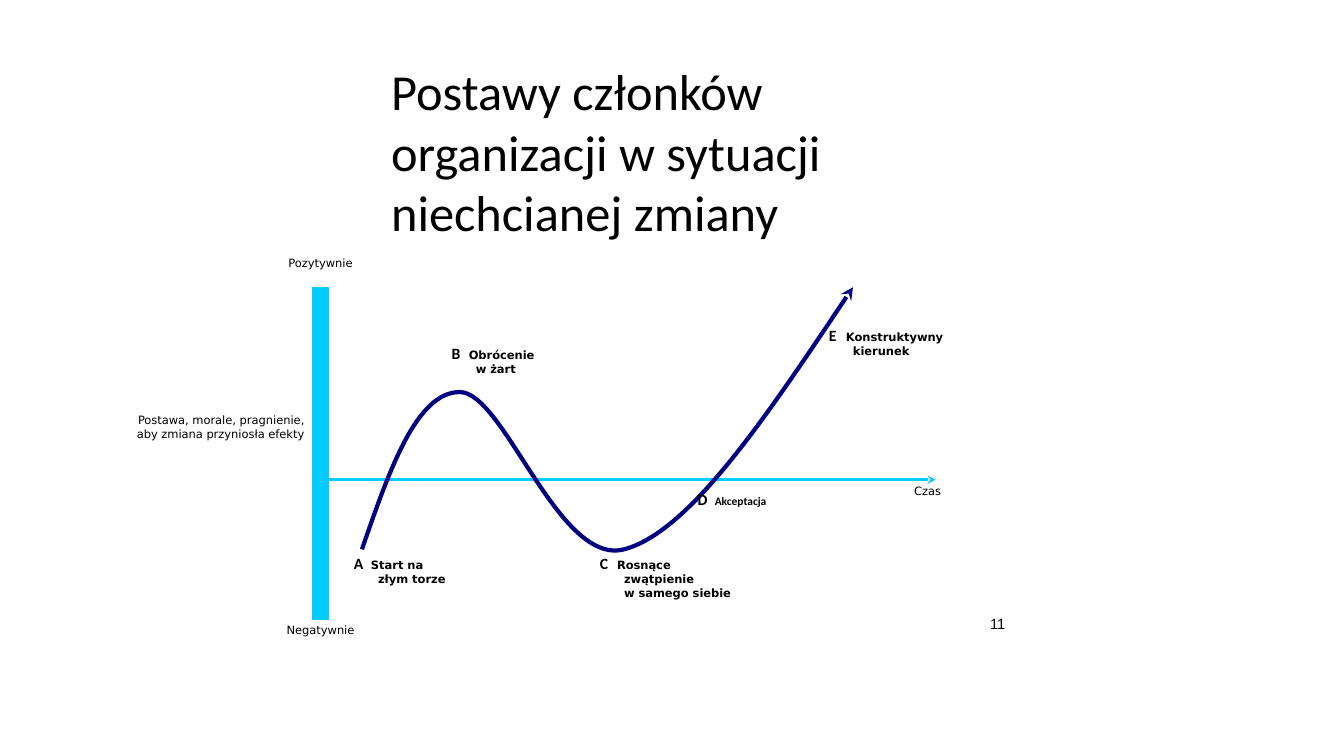
from collections import namedtuple

from lxml.etree import SubElement
from pptx import Presentation
from pptx.dml.color import RGBColor
from pptx.enum.shapes import MSO_CONNECTOR as Connector, MSO_SHAPE as Shape
from pptx.enum.text import MSO_ANCHOR as Anchor, PP_ALIGN as Align
from pptx.oxml.ns import qn
from pptx.util import Inches, Pt

BLACK, CYAN, NAVY = "000000", "00CCFF", "000080"
SANS, LABEL_FONT = "Calibri", "DejaVu Sans"
LABEL_SIZE, LETTER_SIZE = 8.2, 11.2

Box = namedtuple("Box", "left top width height")


def color(hex_string):
    return RGBColor.from_string(hex_string)


def add_run(paragraph, text, size, font, bold=False):
    run = paragraph.add_run()
    run.text = text
    run.font.size = Pt(size)
    run.font.name = font
    run.font.bold = bold
    run.font.color.rgb = color(BLACK)


def add_text_frame(slide, box, side_inset=0.08, anchor=Anchor.TOP):
    frame = slide.shapes.add_textbox(*map(Inches, box)).text_frame
    frame.word_wrap = True
    frame.vertical_anchor = anchor
    frame.margin_left = frame.margin_right = Inches(side_inset)
    frame.margin_top = frame.margin_bottom = Inches(0.04)
    return frame


def style_line(shape, hex_string, width, arrow=False):
    shape.line.color.rgb = color(hex_string)
    shape.line.width = Pt(width)
    if arrow:
        SubElement(shape.line._get_or_add_ln(), qn("a:tailEnd"), type="stealth")


def add_title(slide, box):
    frame = add_text_frame(slide, box, 0.07, Anchor.MIDDLE)
    add_run(frame.paragraphs[0],
            "Postawy członków organizacji w sytuacji niechcianej zmiany", 36, SANS)


def add_page_number(slide, box):
    number = add_text_frame(slide, box, 0.07).paragraphs[0]
    number.alignment = Align.RIGHT
    add_run(number, "11", 10.5, "Arial")


def add_axes(slide, box, axis_y):
    """Draw the attitude bar, the time arrow and the captions around them."""
    bar = slide.shapes.add_shape(Shape.RECTANGLE, Inches(box.left), Inches(box.top),
                                 Inches(0.16), Inches(box.height))
    bar.shadow.inherit = False
    bar.fill.solid()
    bar.fill.fore_color.rgb = color(CYAN)
    style_line(bar, CYAN, 0.75)

    time_y = box.top + axis_y
    time_axis = slide.shapes.add_connector(
        Connector.STRAIGHT, Inches(box.left), Inches(time_y),
        Inches(box.left + box.width), Inches(time_y))
    style_line(time_axis, CYAN, 2, arrow=True)
    SubElement(time_axis._element.spPr, qn("a:effectLst"))

    captions = [
        ("Postawa, morale, pragnienie, aby zmiana przyniosła efekty",
         Align.RIGHT, -1.95, 1.21, 1.95, 1.39),
        ("Pozytywnie", Align.CENTER, -0.65, -0.35, 1.46, 0.52),
        ("Negatywnie", Align.CENTER, -0.65, box.height - 0.01, 1.46, 0.52),
        ("Czas", Align.CENTER, box.width - 0.81, axis_y, 1.46, 0.52),
    ]
    for text, alignment, dx, dy, width, height in captions:
        frame = add_text_frame(slide, Box(box.left + dx, box.top + dy, width, height))
        caption = frame.paragraphs[0]
        caption.alignment = alignment
        add_run(caption, text, LABEL_SIZE, LABEL_FONT)


def add_curve(slide, box):
    """Draw the attitude curve as three Bézier arcs."""
    offsets = [(0.49, 2.6),
               (0.76, 1.82), (1.03, 1.04), (1.46, 1.04),
               (1.9, 1.04), (2.44, 2.77), (3.09, 2.6),
               (3.74, 2.43), (4.55, 1.21), (5.36, 0)]
    points = [(Inches(box.left + dx), Inches(box.top + dy)) for dx, dy in offsets]
    builder = slide.shapes.build_freeform(*points[0])
    builder.add_line_segments(points[1:], close=False)
    curve = builder.convert_to_shape()
    curve.shadow.inherit = False
    curve.fill.background()
    style_line(curve, NAVY, 3, arrow=True)

    outline = curve._element.find(".//" + qn("a:path"))
    segments = outline.findall(qn("a:lnTo"))
    for first in range(0, len(segments), 3):
        arc = SubElement(outline, qn("a:cubicBezTo"))
        for segment in segments[first:first + 3]:
            arc.append(segment[0])
            outline.remove(segment)


def add_stage(slide, box, letter, first_line, more_lines=(), font=LABEL_FONT):
    """Label a stage: letter, tab and name, with further lines indented."""
    frame = add_text_frame(slide, box)
    heading = frame.paragraphs[0]
    tabs = SubElement(heading._p.get_or_add_pPr(), qn("a:tabLst"))
    SubElement(tabs, qn("a:tab"), pos=str(Inches(0.17)), algn="l")
    add_run(heading, letter, LETTER_SIZE, SANS, bold=True)
    add_run(heading, "\t" + first_line, LABEL_SIZE, font, bold=True)
    if more_lines:
        rest = frame.add_paragraph()
        rest._p.get_or_add_pPr().set("marL", str(Inches(0.24)))
        for index, line in enumerate(more_lines):
            if index:
                rest.add_line_break()
            add_run(rest, line, LABEL_SIZE, font, bold=True)


def add_attitude_chart(slide, box):
    add_axes(slide, box, axis_y=1.91)
    add_curve(slide, box)
    stages = [
        (0.33, 2.6, 2.27, 1.04, "A", "Start na", ["złym torze"]),
        (5.04, 0.34, 2.27, 0.87, "E", "Konstruktywny", ["kierunek"]),
        (1.3, 0.52, 2.27, 1.04, "B", "Obrócenie", ["w żart"]),
        (2.77, 2.6, 2.6, 1.04, "C", "Rosnące", ["zwątpienie", "w samego siebie"]),
        (3.74, 1.97, 2.27, 0.63, "D", "Akceptacja", [], SANS),
    ]
    for dx, dy, width, height, *content in stages:
        add_stage(slide, Box(box.left + dx, box.top + dy, width, height), *content)


def main():
    deck = Presentation()
    deck.slide_width, deck.slide_height = Inches(13.33), Inches(7.5)
    slide = deck.slides.add_slide(deck.slide_layouts[6])
    add_page_number(slide, Box(8.29, 6.06, 1.75, 0.39))
    add_title(slide, Box(3.81, 1.13, 5.87, 0.74))
    add_attitude_chart(slide, Box(3.1, 2.85, 6.18, 3.3))
    deck.save("out.pptx")


if __name__ == "__main__":
    main()
